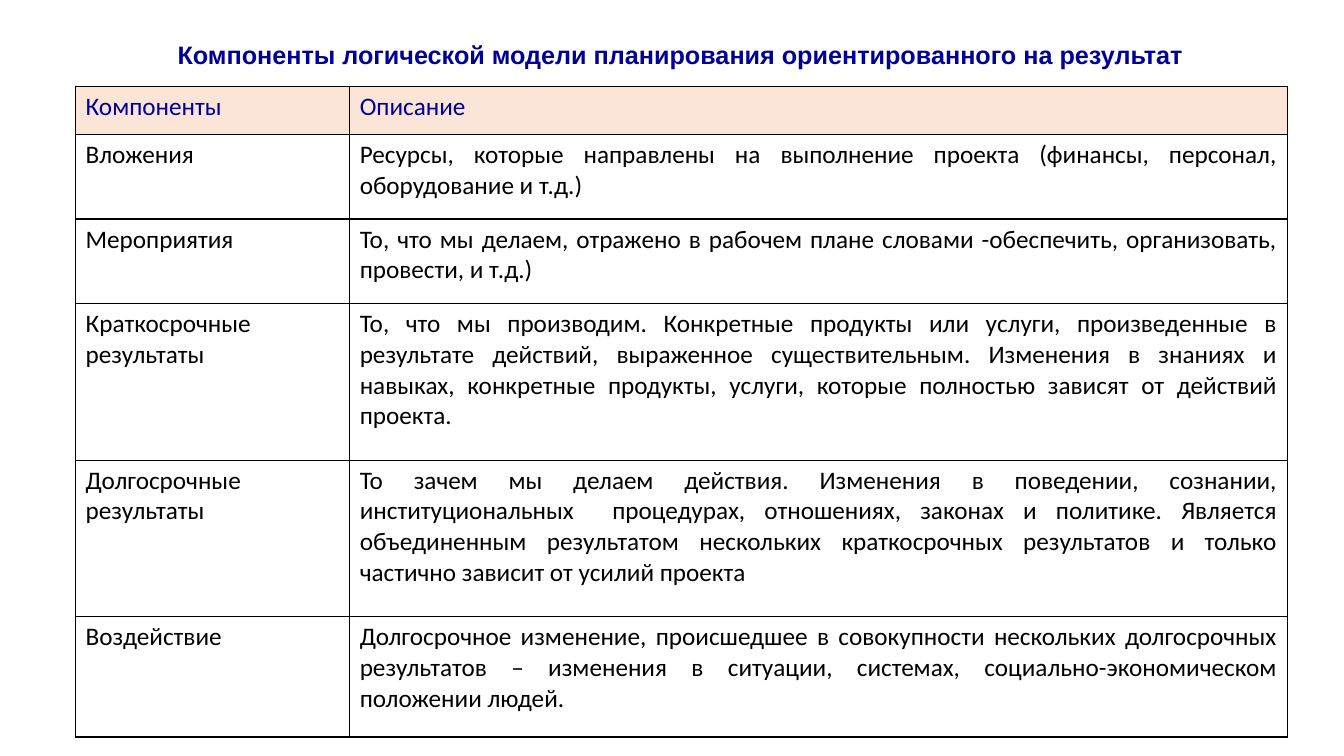
from dataclasses import dataclass

from lxml.etree import SubElement
from pptx import Presentation
from pptx.dml.color import RGBColor
from pptx.enum.text import MSO_ANCHOR, PP_ALIGN
from pptx.oxml.ns import qn
from pptx.util import Pt

TITLE = "Компоненты логической модели планирования ориентированного на результат"

# Component, description, row height in points
ROWS = [
    ("Компоненты", "Описание", 34.6),
    ("Вложения",
     "Ресурсы, которые направлены на выполнение проекта (финансы, персонал, "
     "оборудование и т.д.)", 60.4),
    ("Мероприятия",
     "То, что мы делаем, отражено в рабочем плане словами -обеспечить, "
     "организовать, провести, и т.д.)", 60.4),
    ("Краткосрочные результаты",
     "То, что мы производим. Конкретные продукты или услуги, произведенные в "
     "результате действий, выраженное существительным. Изменения в знаниях и "
     "навыках, конкретные продукты, услуги, которые полностью зависят от "
     "действий проекта.", 111.8),
    ("Долгосрочные результаты",
     "То зачем мы делаем действия. Изменения в поведении, сознании, "
     "институциональных  процедурах, отношениях, законах и политике. Является "
     "объединенным результатом нескольких краткосрочных результатов и только "
     "частично зависит от усилий проекта", 111.8),
    ("Воздействие",
     "Долгосрочное изменение, происшедшее в совокупности нескольких "
     "долгосрочных результатов – изменения в ситуации, системах, "
     "социально-экономическом положении людей.", 86),
]
COLUMN_WIDTHS = (195.8, 669.6)
TABLE_LEFT, TABLE_TOP = 54, 61.5
TITLE_BOX = (102, 24.5, 768, 29)


@dataclass(frozen=True)
class Theme:
    heading: RGBColor = RGBColor(0x00, 0x00, 0x99)
    body: RGBColor = RGBColor(0x00, 0x00, 0x00)
    header_fill: RGBColor = RGBColor(0xFB, 0xE5, 0xD6)
    body_fill: RGBColor = RGBColor(0xFF, 0xFF, 0xFF)
    border: str = "000000"
    border_width: float = 1
    title_font: str = "Arial"
    table_font: str = "Calibri"
    size: float = 18


THEME = Theme()


def format_paragraph(paragraph, font_name, color, alignment, bold=False):
    paragraph.alignment = alignment
    font = paragraph.font
    font.name, font.size, font.bold = font_name, Pt(THEME.size), bold
    font.color.rgb = color


def add_borders(cell):
    """Draw all four cell borders; they must precede the fill in the XML."""
    properties = cell._tc.get_or_add_tcPr()
    for index, side in enumerate(("lnL", "lnR", "lnT", "lnB")):
        line = SubElement(properties, qn(f"a:{side}"), w=str(Pt(THEME.border_width)))
        fill = SubElement(line, qn("a:solidFill"))
        SubElement(fill, qn("a:srgbClr"), val=THEME.border)
        properties.insert(index, line)


def add_title(slide):
    title = slide.shapes.title
    title.left, title.top, title.width, title.height = map(Pt, TITLE_BOX)
    frame = title.text_frame
    frame.text = TITLE
    frame.word_wrap = True
    frame.vertical_anchor = MSO_ANCHOR.MIDDLE
    format_paragraph(frame.paragraphs[0], THEME.title_font, THEME.heading,
                     PP_ALIGN.CENTER, bold=True)


def add_components_table(slide):
    height = sum(row[-1] for row in ROWS)
    table = slide.shapes.add_table(
        len(ROWS), len(COLUMN_WIDTHS), Pt(TABLE_LEFT), Pt(TABLE_TOP),
        Pt(sum(COLUMN_WIDTHS)), Pt(height)).table
    table.first_row = table.horz_banding = False
    for column, width in zip(table.columns, COLUMN_WIDTHS):
        column.width = Pt(width)
    for row_index, (*texts, row_height) in enumerate(ROWS):
        table.rows[row_index].height = Pt(row_height)
        is_header = row_index == 0
        for column_index, text in enumerate(texts):
            cell = table.cell(row_index, column_index)
            cell.text = text
            cell.fill.solid()
            cell.fill.fore_color.rgb = THEME.header_fill if is_header else THEME.body_fill
            add_borders(cell)
            justified = column_index == 1 and not is_header
            format_paragraph(cell.text_frame.paragraphs[0], THEME.table_font,
                             THEME.heading if is_header else THEME.body,
                             PP_ALIGN.JUSTIFY if justified else PP_ALIGN.LEFT)


def main():
    presentation = Presentation()
    presentation.slide_width, presentation.slide_height = Pt(960), Pt(540)
    slide = presentation.slides.add_slide(presentation.slide_layouts.get_by_name("Title Only"))
    add_components_table(slide)
    add_title(slide)
    presentation.save("out.pptx")


if __name__ == "__main__":
    main()
